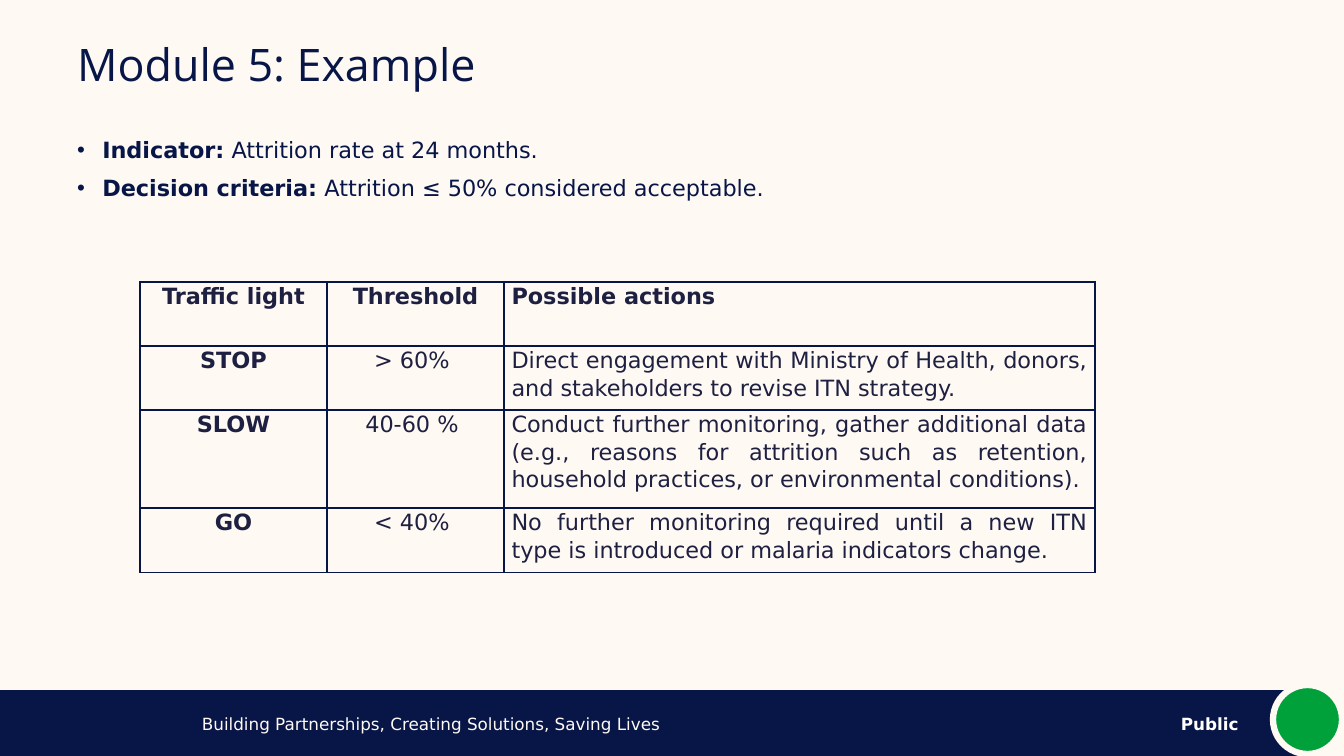
from lxml import etree
from pptx import Presentation
from pptx import util as u
from pptx.dml.color import RGBColor
from pptx.enum import shapes, text
from pptx.oxml.ns import qn

PX = 914400 / 100.8
COLORS = {"navy": "071547", "cream": "FFF9F4", "ink": "1E2041",
          "green": "00A13A", "white": "FFFFFF"}
FONT, TITLE_FONT = "DejaVu Sans", "Open Sans"

TITLE = "Module 5: Example"
BULLETS = [
    ("Indicator:", " Attrition rate at 24 months."),
    ("Decision criteria:", " Attrition ≤ 50% considered acceptable."),
]
ACTIONS = [
    ("Traffic light", "Threshold", "Possible actions"),
    ("STOP", "> 60% ", "Direct engagement with Ministry of Health, donors, "
     "and stakeholders to revise ITN strategy."),
    ("SLOW", "40-60 % ", "Conduct further monitoring, gather additional data "
     "(e.g., reasons for attrition such as retention, household practices, "
     "or environmental conditions)."),
    ("GO", "< 40% ", "No further monitoring required until a new ITN type is "
     "introduced or malaria indicators change."),
]
COL_WIDTHS = [187, 177, 591]
ROW_HEIGHTS = [64, 64, 98, 65]
# text, box, color, bold
FOOTER = [
    ("Building Partnerships, Creating Solutions, Saving Lives",
     (192, 709, 605, 30), "cream", False),
    ("Public", (1171, 709, 144, 30), "white", True),
]


def px(n):
    return u.Emu(round(n * PX))


def rgb(name):
    return RGBColor.from_string(COLORS[name])


def style(r, size, color, bold=False, name=FONT):
    f = r.font
    f.size, f.bold, f.name = u.Pt(size), bold, name
    f.color.rgb = rgb(color)


def place(sp, box):
    sp.left, sp.top, sp.width, sp.height = map(px, box)


def add_filled(s, kind, box, color):
    sp = s.shapes.add_shape(kind, *map(px, box))
    sp.shadow.inherit = False
    sp.fill.solid()
    sp.fill.fore_color.rgb = rgb(color)
    sp.line.fill.background()
    return sp


def add_borders(cell, color):
    tcPr = cell._tc.get_or_add_tcPr()
    for i, side in enumerate(("lnL", "lnR", "lnT", "lnB")):
        ln = etree.Element(qn("a:" + side), w=str(u.Pt(1)))
        fill = etree.SubElement(ln, qn("a:solidFill"))
        etree.SubElement(fill, qn("a:srgbClr"), val=COLORS[color])
        tcPr.insert(i, ln)


def add_heading(s):
    title = s.shapes.title
    place(title, (67, 0, 1210, 134))
    tf = title.text_frame
    tf.text = TITLE
    tf.vertical_anchor = text.MSO_ANCHOR.MIDDLE
    p = tf.paragraphs[0]
    p.alignment, p.line_spacing = text.PP_ALIGN.LEFT, 0.9
    style(p.runs[0], 32, "navy", name=TITLE_FONT)


def add_bullets(s):
    body = s.placeholders[1]
    place(body, (67, 134, 1210, 488))
    tf = body.text_frame
    for i, parts in enumerate(BULLETS):
        p = tf.add_paragraph() if i else tf.paragraphs[0]
        pPr = p._p.get_or_add_pPr()
        pPr.set("marL", str(u.Inches(0.25)))
        pPr.set("indent", str(-u.Inches(0.25)))
        etree.SubElement(pPr, qn("a:buChar"), char="•")
        p.line_spacing = 0.9
        p.space_before = u.Pt(10 if i else 0)
        for words, bold in zip(parts, (True, False)):
            r = p.add_run()
            r.text = words
            style(r, 16, "navy", bold)


def add_action_table(s):
    box = (140, 282, sum(COL_WIDTHS), sum(ROW_HEIGHTS))
    table = s.shapes.add_table(len(ACTIONS), len(COL_WIDTHS),
                               *map(px, box)).table
    table.first_row = table.horz_banding = False
    for col, width in zip(table.columns, COL_WIDTHS):
        col.width = px(width)
    for i, (row, height) in enumerate(zip(table.rows, ROW_HEIGHTS)):
        row.height = px(height)
        for j, cell in enumerate(row.cells):
            cell.margin_left = cell.margin_right = u.Pt(5.4)
            cell.margin_top = cell.margin_bottom = 0
            cell.fill.background()
            add_borders(cell, "navy")
            cell.text = ACTIONS[i][j]
            p = cell.text_frame.paragraphs[0]
            p.alignment = (text.PP_ALIGN.JUSTIFY if j == 2
                           else text.PP_ALIGN.CENTER)
            p.line_spacing, p.space_after = 1.07, u.Pt(8)
            style(p.runs[0], 16, "ink", i == 0 or j == 0)


def add_footer(s):
    add_filled(s, shapes.MSO_SHAPE.RECTANGLE, (0, 690, 1300, 66), "navy")
    dot = add_filled(s, shapes.MSO_SHAPE.OVAL, (1273, 685, 69, 69), "green")
    dot.line.color.rgb = rgb("cream")
    dot.line.width = u.Pt(4.5)
    for words, box, color, bold in FOOTER:
        tf = s.shapes.add_textbox(*map(px, box)).text_frame
        tf.word_wrap = True
        tf.vertical_anchor = text.MSO_ANCHOR.MIDDLE
        tf.text = words
        style(tf.paragraphs[0].runs[0], 12, color, bold)


def main():
    prs = Presentation()
    prs.slide_width, prs.slide_height = px(1344), px(756)
    s = prs.slides.add_slide(prs.slide_layouts[1])
    s.background.fill.solid()
    s.background.fill.fore_color.rgb = rgb("cream")
    add_heading(s)
    add_bullets(s)
    add_action_table(s)
    add_footer(s)
    prs.save("out.pptx")


if __name__ == "__main__":
    main()
